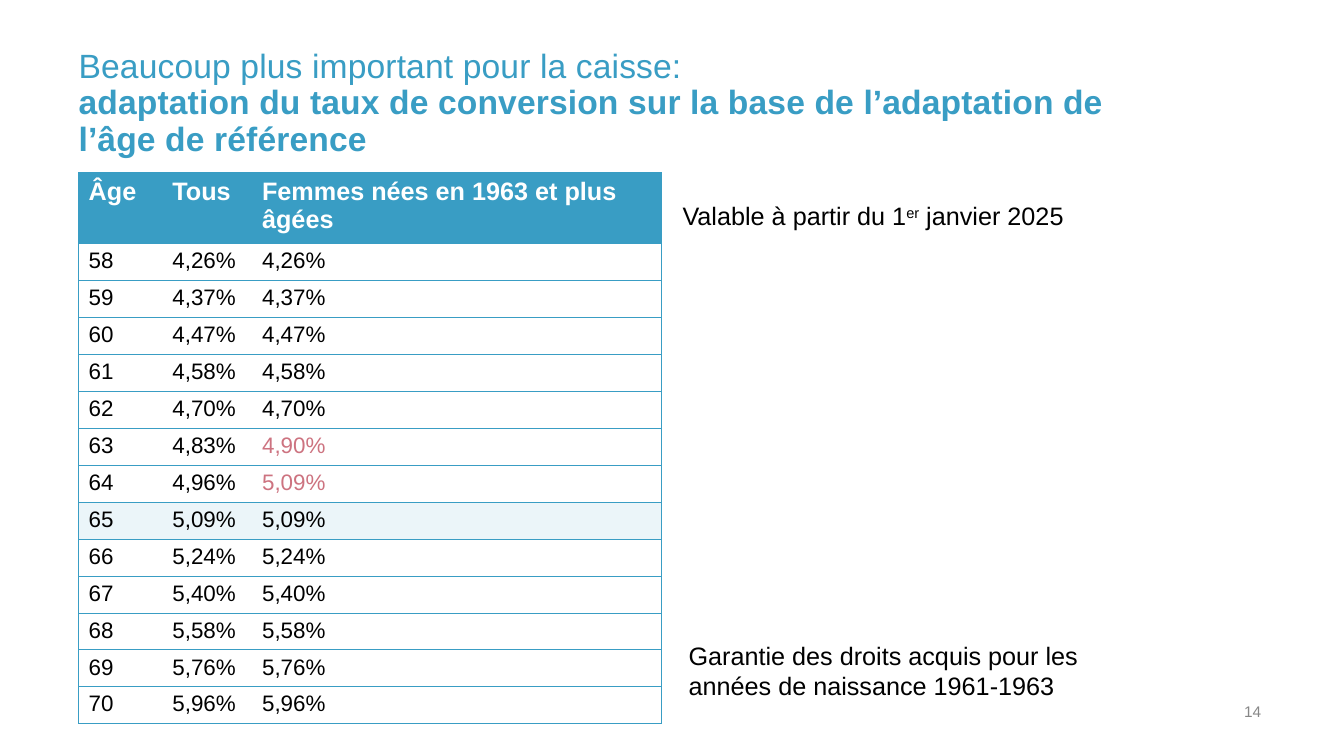
from lxml.etree import SubElement
from pptx import Presentation
from pptx.dml.color import RGBColor
from pptx.enum.text import MSO_ANCHOR, PP_ALIGN
from pptx.oxml.ns import qn
from pptx.util import Inches, Pt

# Content
BLUE, PALE, ROSE = "399DC4", "EBF5F9", "CD7380"
BLACK, WHITE, GREY = "000000", "FFFFFF", "878787"

TITLE = ["Beaucoup plus important pour la caisse:",
         "adaptation du taux de conversion sur la base de l’adaptation de l’âge de référence"]
HEADER = ("Âge", "Tous", "Femmes nées en 1963 et plus âgées")
RATES = [
    ("58", "4,26%", "4,26%"),
    ("59", "4,37%", "4,37%"),
    ("60", "4,47%", "4,47%"),
    ("61", "4,58%", "4,58%"),
    ("62", "4,70%", "4,70%"),
    ("63", "4,83%", "4,90%"),
    ("64", "4,96%", "5,09%"),
    ("65", "5,09%", "5,09%"),
    ("66", "5,24%", "5,24%"),
    ("67", "5,40%", "5,40%"),
    ("68", "5,58%", "5,58%"),
    ("69", "5,76%", "5,76%"),
    ("70", "5,96%", "5,96%"),
]
REFERENCE_AGE = "65"
COLUMN_WIDTHS = (0.83, 0.89, 4.06)
HEADER_HEIGHT, ROW_HEIGHT = 0.49, 0.28
VALID_FROM = [("Valable à partir du 1", False), ("er", True), (" janvier 2025", False)]
GUARANTEE = "Garantie des droits acquis pour les années de naissance 1961-1963"
PAGE = "14"


def color(hex_code):
    return RGBColor.from_string(hex_code)


def add_run(p, text, size, hex_code, bold=False):
    r = p.add_run()
    r.text = text
    r.font.name, r.font.size, r.font.bold = "Arial", Pt(size), bold
    r.font.color.rgb = color(hex_code)
    return r


def add_box(s, left, top, width, height, anchor=MSO_ANCHOR.TOP):
    tf = s.shapes.add_textbox(Inches(left), Inches(top), Inches(width), Inches(height)).text_frame
    tf.word_wrap = True
    tf.vertical_anchor = anchor
    tf.margin_left = tf.margin_right = tf.margin_top = tf.margin_bottom = 0
    return tf.paragraphs[0]


def add_borders(cell, sides):
    for side in sides:
        ln = SubElement(cell._tc.get_or_add_tcPr(), qn(f"a:ln{side}"), w=str(Pt(0.5)))
        SubElement(SubElement(ln, qn("a:solidFill")), qn("a:srgbClr"), val=BLUE)


prs = Presentation()
prs.slide_width, prs.slide_height = Inches(13.33), Inches(7.5)
s = prs.slides.add_slide(prs.slide_layouts[6])

# Title
p = add_box(s, 0.78, 0.69, 10.56, 0.88, MSO_ANCHOR.BOTTOM)
p.line_spacing = 0.9
for i, line in enumerate(TITLE):
    if i:
        p.add_line_break()
    r = add_run(p, line, 24, BLUE, bold=i > 0)
    r.font._element.set("spc", "10")

# Page number
p = add_box(s, 11.15, 6.96, 1.36, 0.19, MSO_ANCHOR.BOTTOM)
p.alignment = PP_ALIGN.RIGHT
add_run(p, PAGE, 11, GREY)

# Table of conversion rates
rows = [HEADER] + RATES
heights = [HEADER_HEIGHT] + [ROW_HEIGHT] * len(RATES)
table = s.shapes.add_table(len(rows), len(HEADER), Inches(0.78), Inches(1.71),
                           Inches(sum(COLUMN_WIDTHS)), Inches(sum(heights))).table
table.horz_banding = False
table._tbl.tblPr.find(qn("a:tableStyleId")).text = "{2D5ABB26-0587-4C30-8999-92F81FD0307C}"
for column, width in zip(table.columns, COLUMN_WIDTHS):
    column.width = Inches(width)

for i, (values, height) in enumerate(zip(rows, heights)):
    table.rows[i].height = Inches(height)
    is_header = i == 0
    for j, text in enumerate(values):
        cell = table.cell(i, j)
        sides = ("L" if j == 0 else "") + ("R" if j == len(values) - 1 else "") + "TB"
        add_borders(cell, sides)
        if is_header or values[0] == REFERENCE_AGE:
            cell.fill.solid()
            cell.fill.fore_color.rgb = color(BLUE if is_header else PALE)
        else:
            cell.fill.background()
        p = cell.text_frame.paragraphs[0]
        if is_header:
            add_run(p, text, 18, WHITE, bold=True)
        else:
            differs = j == 2 and text != values[1]
            add_run(p, text, 16, ROSE if differs else BLACK)

# Side notes
p = add_box(s, 6.83, 6.35, 4.24, 0.61)
add_run(p, GUARANTEE, 18, BLACK)

p = add_box(s, 6.77, 1.99, 4.24, 0.3)
for text, raised in VALID_FROM:
    r = add_run(p, text, 18, BLACK)
    if raised:
        r.font._element.set("baseline", "30000")

prs.save("out.pptx")
